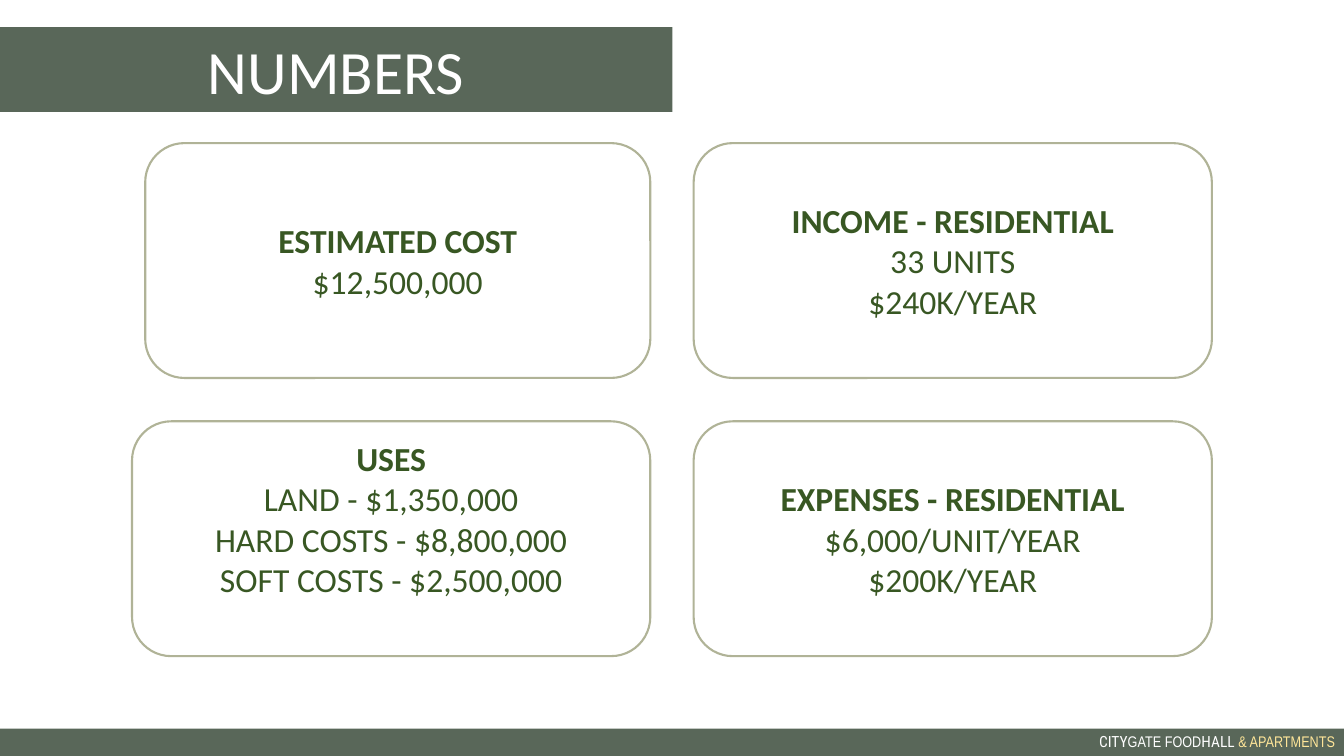
"""Build the project numbers slide with four figure cards."""
from pptx import Presentation
from pptx.dml.color import RGBColor
from pptx.enum.shapes import MSO_SHAPE
from pptx.enum.text import MSO_ANCHOR, PP_ALIGN
from pptx.util import Inches, Pt

SAGE = RGBColor(0x59, 0x67, 0x59)
OUTLINE = RGBColor(0xB0, 0xB3, 0x97)
GREEN = RGBColor(0x38, 0x57, 0x23)
WHITE = RGBColor(0xFF, 0xFF, 0xFF)
YELLOW = RGBColor(0xFF, 0xE6, 0x99)


def add_run(p, text, size=24, font="Calibri", color=GREEN, bold=False):
    r = p.add_run()
    r.text = text
    r.font.size = Pt(size)
    r.font.name = font
    r.font.color.rgb = color
    r.font.bold = bold


def add_box(kind, left, top, width, height, fill=None, line=None):
    sp = s.shapes.add_shape(kind, Inches(left), Inches(top), Inches(width), Inches(height))
    sp.shadow.inherit = False
    if fill is None:
        sp.fill.background()
    else:
        sp.fill.solid()
        sp.fill.fore_color.rgb = fill
    if line is None:
        sp.line.fill.background()
    else:
        sp.line.color.rgb = line
        sp.line.width = Pt(1.5)
    tf = sp.text_frame
    tf.word_wrap = True
    tf.vertical_anchor = MSO_ANCHOR.MIDDLE
    tf.paragraphs[0].alignment = PP_ALIGN.CENTER
    return tf


prs = Presentation()
prs.slide_width = Inches(13.33)
prs.slide_height = Inches(7.5)
s = prs.slides.add_slide(prs.slide_layouts[6])

TOP_ROW, BOTTOM_ROW, CARD_HEIGHT = 1.42, 4.18, 2.33
cards = [
    (6.88, TOP_ROW, 5.14, 0.05, ["INCOME - RESIDENTIAL", "33 UNITS", "$240K/YEAR"]),
    (6.88, BOTTOM_ROW, 5.14, 0.05,
     ["EXPENSES - RESIDENTIAL", "$6,000/UNIT/YEAR", "$200K/YEAR"]),
    (1.44, TOP_ROW, 5.01, 0.05, ["ESTIMATED COST", "$12,500,000"]),
    (1.31, BOTTOM_ROW, 5.14, 0.45,
     ["USES", "LAND - $1,350,000", "HARD COSTS - $8,800,000", "SOFT COSTS - $2,500,000"]),
]
for left, top, width, bottom_inset, lines in cards:
    tf = add_box(MSO_SHAPE.ROUNDED_RECTANGLE, left, top, width, CARD_HEIGHT, line=OUTLINE)
    tf.margin_bottom = Inches(bottom_inset)
    for i, text in enumerate(lines):
        p = tf.add_paragraph() if i else tf.paragraphs[0]
        p.alignment = PP_ALIGN.CENTER
        add_run(p, text, bold=i == 0)

add_box(MSO_SHAPE.RECTANGLE, 0, 7.23, 13.33, 0.27, fill=SAGE)
footer = s.shapes.add_textbox(Inches(9.62), Inches(7.21), Inches(3.72), Inches(0.29))
tf = footer.text_frame
tf.word_wrap = True
p = tf.paragraphs[0]
p.alignment = PP_ALIGN.RIGHT
for text, font, color in [
    ("CITY", "Roboto Condensed", WHITE),
    ("GATE FOOD", "Arial Narrow", WHITE),
    ("HALL ", "Roboto Condensed", WHITE),
    ("& APARTMENTS", "Arial Narrow", YELLOW),
]:
    add_run(p, text, size=11, font=font, color=color)

tf = add_box(MSO_SHAPE.RECTANGLE, 0, 0.27, 6.67, 0.84, fill=SAGE)
add_run(tf.paragraphs[0], "NUMBERS", size=44, color=WHITE)

prs.save("out.pptx")
